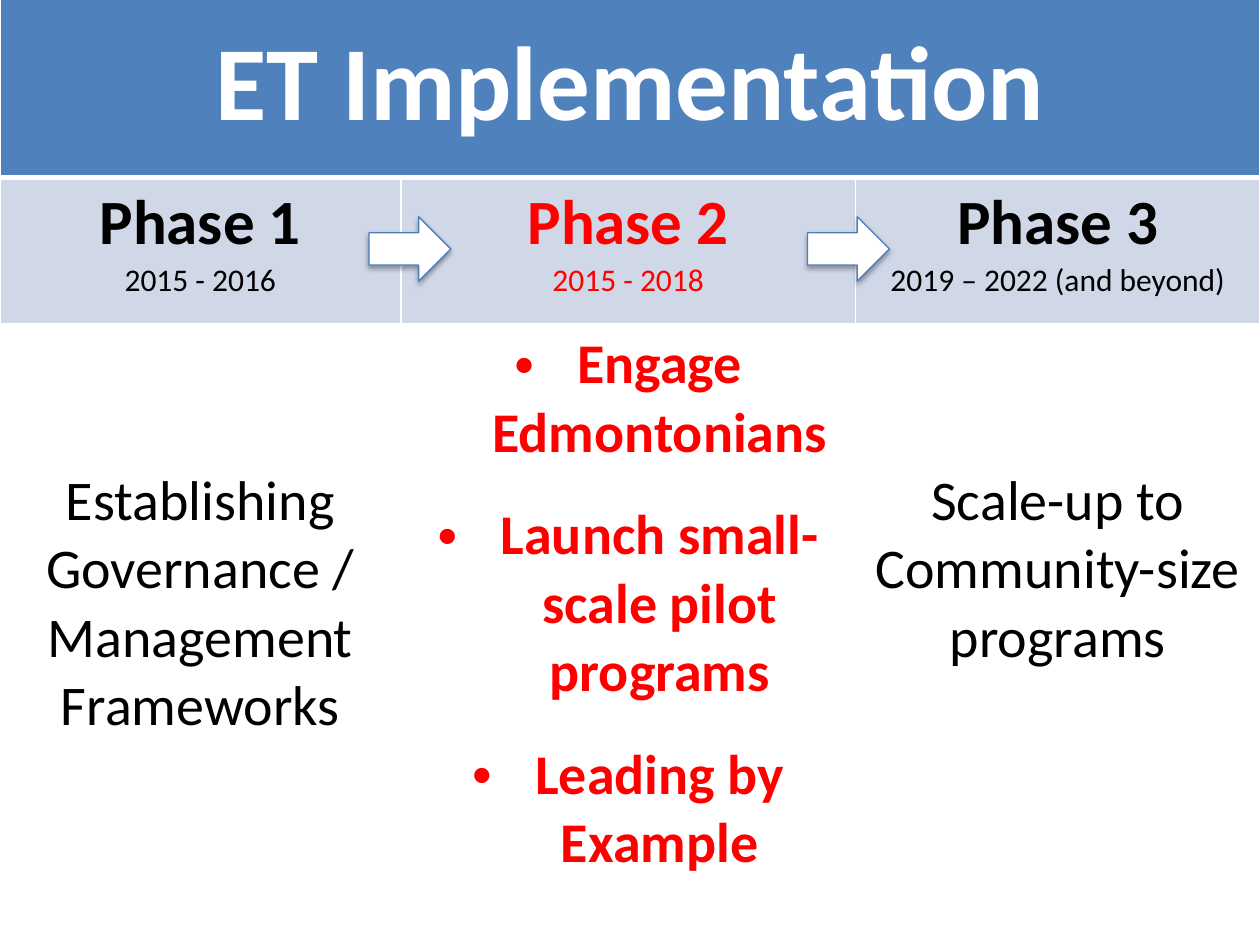
import pptx
import pptx.util
import pptx.dml.color
import pptx.enum.shapes
import pptx.enum.text
import pptx.oxml
import pptx.oxml.ns
from pptx.util import Cm, Pt

COLOURS = {
    "banner": "4F81BD",
    "phase": "D0D8E8",
    "white": "FFFFFF",
    "text": "000000",
    "current": "FF0000",
    "arrow_line": "4B7EBC",
}
COLUMN_WIDTHS = [8.08, 9.17, 8.15]
ROW_HEIGHTS = [3.63, 2.95, 12.85]
PHASES = [
    ("Phase 1", "2015 - 2016", "text",
     ["Establishing Governance / Management Frameworks"]),
    ("Phase 2", "2015 - 2018", "current",
     ["Engage Edmontonians", "Launch small-scale pilot programs", "Leading by Example"]),
    ("Phase 3", "2019 – 2022 (and beyond)", "text",
     ["Scale-up to Community-size programs"]),
]


def rgb(name):
    return pptx.dml.color.RGBColor.from_string(COLOURS[name])


def xml(fragment):
    """Parse one DrawingML element, given with the a: prefix."""
    head, tail = fragment.split(" ", 1)
    return pptx.oxml.parse_xml(f"{head} {pptx.oxml.ns.nsdecls('a')} {tail}")


class PhaseSlide:
    font = "Calibri"

    def __init__(self, slide):
        self.slide = slide

    def table(self, left, top, widths, heights):
        frame = self.slide.shapes.add_table(
            len(heights), len(widths), Cm(left), Cm(top), Cm(sum(widths)), Cm(sum(heights)))
        grid = frame.table
        grid.first_row = grid.horz_banding = False
        for column, width in zip(grid.columns, widths):
            column.width = Cm(width)
        for row, height in zip(grid.rows, heights):
            row.height = Cm(height)
        return grid

    def cell(self, cell, lines, fill, colour, top_margin=0.13, top_line=1, bottom_line=1):
        """Fill a cell with lines, each a (text, size, bold) tuple."""
        cell.fill.solid()
        cell.fill.fore_color.rgb = rgb(fill)
        cell.margin_top = Cm(top_margin)
        cell.text_frame.text = "\n".join(text for text, _, _ in lines)
        for paragraph, (_, size, bold) in zip(cell.text_frame.paragraphs, lines):
            paragraph.alignment = pptx.enum.text.PP_ALIGN.CENTER
            for run in paragraph.runs:
                run.font.name = self.font
                run.font.size = Pt(size)
                run.font.bold = bold
                run.font.color.rgb = rgb(colour)
        properties = cell._tc.get_or_add_tcPr()
        edges = [("L", 1), ("R", 1), ("T", top_line), ("B", bottom_line)]
        for position, (edge, width) in enumerate(edges):
            properties.insert(position, xml(
                f'<a:ln{edge} w="{Pt(width)}"><a:solidFill>'
                f'<a:srgbClr val="{COLOURS["white"]}"/></a:solidFill></a:ln{edge}>'))

    def bullets(self, cell, gap):
        for index, paragraph in enumerate(cell.text_frame.paragraphs):
            if index:
                paragraph.space_before = Pt(gap)
            properties = paragraph._p.get_or_add_pPr()
            properties.set("marL", str(Cm(1.27)))
            properties.set("indent", str(-Cm(1.27)))
            properties.append(xml('<a:buFont typeface="Arial"/>'))
            properties.append(xml('<a:buChar char="•"/>'))

    def arrow(self, left, top, width, height):
        arrow = self.slide.shapes.add_shape(
            pptx.enum.shapes.MSO_SHAPE.RIGHT_ARROW, Cm(left), Cm(top), Cm(width), Cm(height))
        arrow.fill.solid()
        arrow.fill.fore_color.rgb = rgb("white")
        arrow.line.color.rgb = rgb("arrow_line")
        arrow.line.width = Pt(0.75)
        arrow.shadow.inherit = False
        effects = arrow._element.spPr.find(pptx.oxml.ns.qn("a:effectLst"))
        effects.append(xml(
            f'<a:outerShdw blurRad="{Pt(3.1)}" dist="{Pt(1.8)}" dir="5400000" rotWithShape="0">'
            f'<a:srgbClr val="{COLOURS["text"]}"><a:alpha val="35000"/></a:srgbClr>'
            '</a:outerShdw>'))


def main():
    deck = pptx.Presentation()
    deck.slide_width, deck.slide_height = Cm(25.4), Cm(19.05)
    page = PhaseSlide(deck.slides.add_slide(deck.slide_layouts[6]))

    plan = page.table(0, -0.05, COLUMN_WIDTHS, ROW_HEIGHTS)
    plan.cell(0, 0).merge(plan.cell(0, 2))
    page.cell(plan.cell(0, 0), [("ET Implementation", 60, True)],
              "banner", "white", top_margin=0.47, bottom_line=3)

    for column, (name, years, colour, actions) in enumerate(PHASES):
        page.cell(plan.cell(1, column), [(name, 36, True), (years, 18, False)],
                  "phase", colour, top_line=3)
        is_list = len(actions) > 1
        page.cell(plan.cell(2, column), [(action, 32, is_list) for action in actions],
                  "white", colour, top_margin=0.13 if is_list else 2.88)
        if is_list:
            page.bullets(plan.cell(2, column), gap=19.5)

    for left in (7.44, 16.28):
        page.arrow(left, 4.37, 1.65, 1.3)

    deck.save("out.pptx")


if __name__ == "__main__":
    main()
